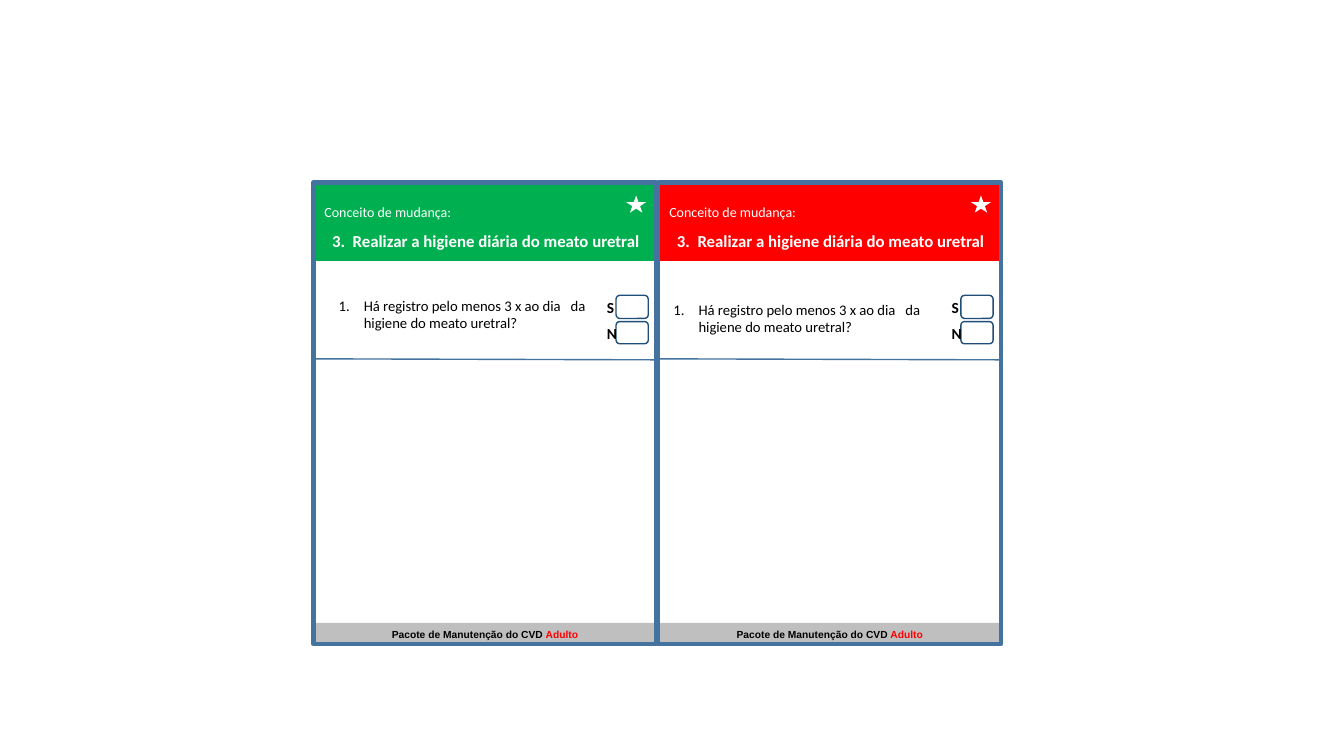
from pptx import Presentation
from pptx.dml.color import RGBColor
from pptx.enum.shapes import MSO_CONNECTOR, MSO_SHAPE
from pptx.enum.text import MSO_ANCHOR, MSO_AUTO_SIZE, PP_ALIGN
from pptx.oxml.ns import qn
from pptx.util import Inches, Pt

RECT, ROUNDED, STAR = MSO_SHAPE.RECTANGLE, MSO_SHAPE.ROUNDED_RECTANGLE, MSO_SHAPE.STAR_5_POINT
STRAIGHT = MSO_CONNECTOR.STRAIGHT
TOP, MIDDLE = MSO_ANCHOR.TOP, MSO_ANCHOR.MIDDLE
LEFT, CENTER = PP_ALIGN.LEFT, PP_ALIGN.CENTER
GROW = MSO_AUTO_SIZE.SHAPE_TO_FIT_TEXT

KICKER = "Conceito de mudança:"
HEADING = "3.  Realizar a higiene diária do meato uretral"
QUESTION = "Há registro pelo menos 3 x ao dia   da  higiene do meato uretral?"
PACKAGE, AUDIENCE = "Pacote de Manutenção do CVD ", "Adulto"
ANSWERS = [
    {"letter": "S", "letter_top": 2.96, "letter_height": 0.17, "box_top": 2.93, "box_height": 0.23},
    {"letter": "N", "letter_top": 3.24, "letter_height": 0.14, "box_top": 3.19, "box_height": 0.22},
]
CARDS = [
    {"header": "green", "question_offset": 0.15, "question_top": 2.86},
    {"header": "red", "question_offset": 0.05, "question_top": 2.9},
]

THEME = {
    "colors": {
        "green": "00B050", "red": "FF0000", "white": "FFFFFF", "black": "000000",
        "footer": "BFBFBF", "frame": "43739E", "box": "1F4E79",
    },
    "sizes": {"footer": 7.3, "kicker": 10, "heading": 12, "answer": 11, "question": 10.5},
    "body": "Calibri",
    "footer": "Arial",
}

CARD_LEFT, CARD_TOP, CARD_WIDTH, CARD_HEIGHT, CARD_STEP = 3.11, 1.81, 3.4, 4.58, 3.42

prs = Presentation()
prs.slide_width, prs.slide_height = Inches(13.33), Inches(7.5)
slide = prs.slides.add_slide(prs.slide_layouts[6])


def color(name):
    return RGBColor.from_string(THEME["colors"][name])


def add_block(kind, left, top, width, height, fill=None, line=None, weight=1):
    block = slide.shapes.add_shape(kind, Inches(left), Inches(top), Inches(width), Inches(height))
    block.shadow.inherit = False
    if fill:
        block.fill.solid()
        block.fill.fore_color.rgb = color(fill)
    else:
        block.fill.background()
    if line:
        block.line.color.rgb = color(line)
        block.line.width = Pt(weight)
    else:
        block.line.fill.background()
    return block


def add_label(left, top, width, height):
    return slide.shapes.add_textbox(Inches(left), Inches(top), Inches(width), Inches(height))


def write(holder, paragraphs, size_names, align, anchor=MIDDLE, font="body", spacing=None):
    frame = holder.text_frame
    frame.word_wrap = True
    frame.vertical_anchor = anchor
    for index, (runs, size_name, alignment) in enumerate(zip(paragraphs, size_names, align)):
        paragraph = frame.add_paragraph() if index else frame.paragraphs[0]
        paragraph.alignment = alignment
        if spacing:
            paragraph.line_spacing = spacing
        for text, color_name, bold in runs:
            run = paragraph.add_run()
            run.text = text
            run.font.name = THEME[font]
            run.font.size = Pt(THEME["sizes"][size_name])
            run.font.bold = bold
            run.font.color.rgb = color(color_name)
    return frame


def number(paragraph):
    props = paragraph._p.get_or_add_pPr()
    props.set("marL", str(Inches(0.25)))
    props.set("indent", str(Inches(-0.25)))
    bullet = props.makeelement(qn("a:buAutoNum"), {"type": "arabicPeriod"})
    props.append(bullet)


def add_divider(left, right):
    divider = slide.shapes.add_connector(
        STRAIGHT, Inches(left), Inches(3.56), Inches(right), Inches(3.57))
    divider.line.color.rgb = color("frame")
    divider.line.width = Pt(1)
    props = divider._element.spPr
    props.append(props.makeelement(qn("a:effectLst"), {}))


def add_card(left, card):
    footer = add_block(RECT, left, 6.18, CARD_WIDTH, 0.22, fill="footer")
    footer_frame = write(footer, [[(PACKAGE, "black", True), (AUDIENCE, "red", True)]],
                         ["footer"], [CENTER], TOP, "footer")
    footer_frame.auto_size = GROW

    header = add_block(RECT, left + 0.01, 1.83, CARD_WIDTH, 0.76, fill=card["header"])
    write(header, [[(KICKER, "white", False)], [(HEADING, "white", True)]],
          ["kicker", "heading"], [LEFT, CENTER], spacing=1.5)

    for answer in ANSWERS:
        add_block(ROUNDED, left + 3, answer["box_top"], 0.32, answer["box_height"], line="box")
        letter = add_label(left + 2.81, answer["letter_top"], 0.24, answer["letter_height"])
        write(letter, [[(answer["letter"], "black", True)]], ["answer"], [CENTER])

    add_block(RECT, left, CARD_TOP, CARD_WIDTH, CARD_HEIGHT, line="frame", weight=3)
    add_divider(left + 0.01, left + CARD_WIDTH)
    add_block(STAR, left + 3.1, 1.94, 0.2, 0.17, fill="white")

    question = add_label(left + card["question_offset"], card["question_top"], 2.8, 0.51)
    question_frame = write(question, [[(QUESTION, "black", False)]], ["question"], [LEFT])
    number(question_frame.paragraphs[0])


for position, card in enumerate(CARDS):
    add_card(CARD_LEFT + position * CARD_STEP, card)

prs.save("out.pptx")
